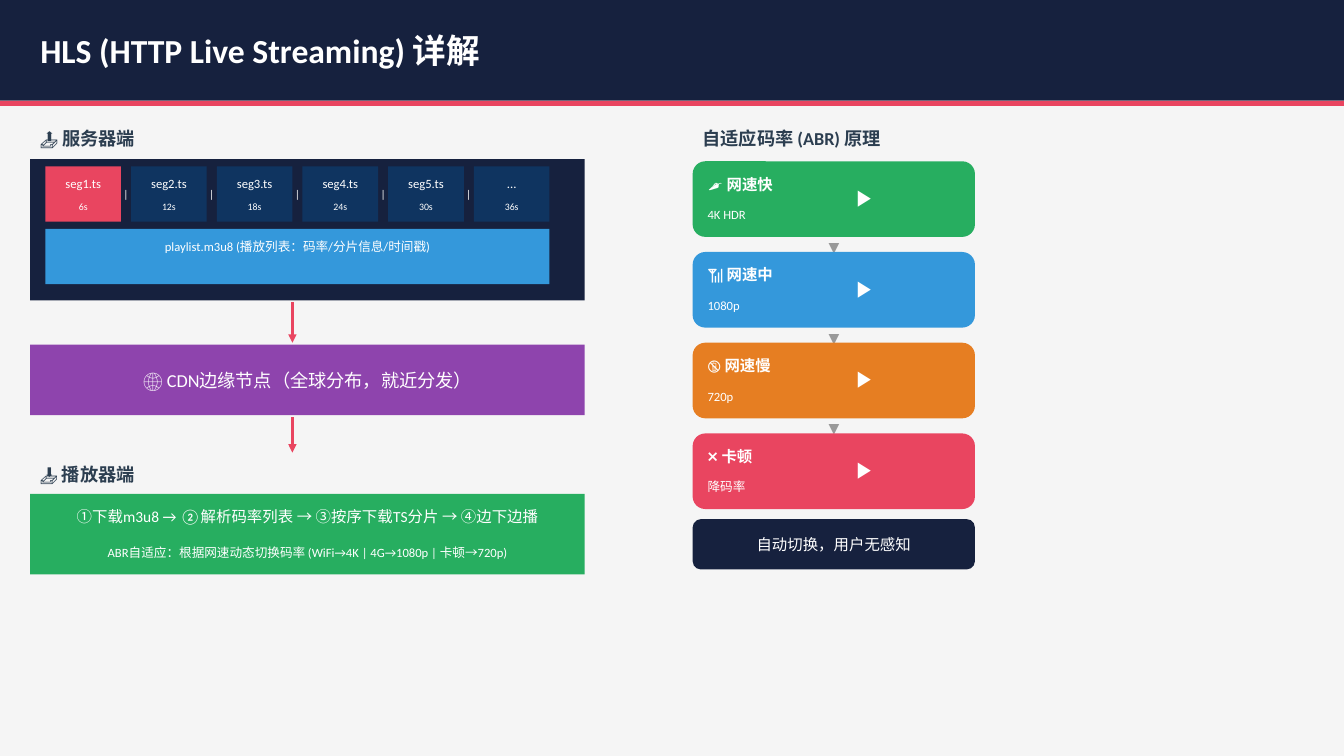
from lxml import etree
from pptx import Presentation
from pptx.dml.color import RGBColor
from pptx.enum.shapes import MSO_CONNECTOR, MSO_SHAPE
from pptx.enum.text import MSO_ANCHOR, PP_ALIGN
from pptx.oxml.ns import qn
from pptx.util import Inches, Pt

RECT, ROUND = MSO_SHAPE.RECTANGLE, MSO_SHAPE.ROUNDED_RECTANGLE
STRAIGHT = MSO_CONNECTOR.STRAIGHT
MIDDLE = MSO_ANCHOR.MIDDLE
LEFT, CENTER = PP_ALIGN.LEFT, PP_ALIGN.CENTER
FONT = "Calibri"

COLORS = {
    "bg": "F5F5F5", "navy": "16213E", "red": "E94560", "blue": "0F3460",
    "sky": "3498DB", "purple": "8E44AD", "green": "27AE60",
    "orange": "E67E22", "dark": "2C3E50", "gray": "999999", "white": "FFFFFF",
}
SEGMENTS = [("seg1.ts", "6s"), ("seg2.ts", "12s"), ("seg3.ts", "18s"),
            ("seg4.ts", "24s"), ("seg5.ts", "30s"), ("...", "36s")]
SPEEDS = [("🌶️ 网速快", "4K HDR", "green"), ("📶 网速中", "1080p", "sky"),
          ("📵 网速慢", "720p", "orange"), ("❌ 卡顿", "降码率", "red")]


def rgb(name):
    """Return the named colour."""
    return RGBColor.from_string(COLORS[name])


def add_box(s, x, y, w, h, color, kind=RECT):
    """Add a filled shape without outline."""
    sp = s.shapes.add_shape(kind, Inches(x), Inches(y), Inches(w), Inches(h))
    sp.shadow.inherit = False
    sp.fill.solid()
    sp.fill.fore_color.rgb = rgb(color)
    sp.line.fill.background()


def add_text(s, x, y, w, h, text, size, color="white", bold=False, align=CENTER, inset=None):
    """Add a one-line text box centred vertically."""
    tf = s.shapes.add_textbox(Inches(x), Inches(y), Inches(w), Inches(h)).text_frame
    frame = {"word_wrap": True, "vertical_anchor": MIDDLE}
    if inset is not None:
        frame.update({f"margin_{side}": Inches(inset)
                      for side in ("left", "top", "right", "bottom")})
    for key, value in frame.items():
        setattr(tf, key, value)
    p = tf.paragraphs[0]
    p.alignment = align
    r = p.add_run()
    r.text = text
    for key, value in {"name": FONT, "size": Pt(size), "bold": bold}.items():
        setattr(r.font, key, value)
    r.font.color.rgb = rgb(color)


def add_heading(s, x, y, w, text):
    """Add a section heading."""
    add_text(s, x, y, w, 0.3, text, 13, "dark", True, LEFT)


def add_arrow(s, x, y, length):
    """Add a downward arrow."""
    cx = s.shapes.add_connector(STRAIGHT, Inches(x), Inches(y), Inches(x), Inches(y + length))
    cx.line.color.rgb = rgb("red")
    cx.line.width = Pt(2)
    etree.SubElement(cx.line._get_or_add_ln(), qn("a:tailEnd"), type="triangle")
    etree.SubElement(cx._element.spPr, qn("a:effectLst"))


def add_header(s, w, h):
    """Draw the title band and its accent rule."""
    add_box(s, 0, 0, w, h, "navy")
    add_box(s, 0, h, w, 0.05, "red")
    add_text(s, 0.4, 0.15, w - 0.8, h - 0.3, "HLS (HTTP Live Streaming) 详解", 24,
             bold=True, align=LEFT, inset=0)


def add_server(s, x, y, w):
    """Draw the server panel with its segments and playlist."""
    add_heading(s, x, y, 3, "📤 服务器端")
    add_box(s, x, y + 0.36, w, 1.4, "navy")
    seg_w, seg_h, gap, top = 0.75, 0.55, 0.1, y + 0.43
    for i, (name, time) in enumerate(SEGMENTS):
        left = x + 0.15 + i * (seg_w + gap)
        add_box(s, left, top, seg_w, seg_h, "blue" if i else "red")
        add_text(s, left, top + 0.02, seg_w, 0.3, name, 9)
        add_text(s, left, top + 0.3, seg_w, 0.2, time, 7)
        if i < len(SEGMENTS) - 1:
            add_text(s, left + seg_w, top, gap, seg_h, "|", 8)
    add_box(s, x + 0.15, y + 1.05, w - 0.5, 0.55, "sky")
    add_text(s, x + 0.2, y + 1.08, w - 0.6, 0.3,
             "playlist.m3u8 (播放列表：码率/分片信息/时间戳)", 9)


def add_cdn(s, x, y, w):
    """Draw the CDN bar between its two arrows."""
    add_arrow(s, x + 2.6, y - 0.42, 0.4)
    add_box(s, x, y, w, 0.7, "purple")
    add_text(s, x + 0.05, y + 0.05, w - 0.1, 0.6, "🌐 CDN边缘节点（全球分布，就近分发）", 13)
    add_arrow(s, x + 2.6, y + 0.72, 0.35)


def add_player(s, x, y, w):
    """Draw the player panel."""
    add_heading(s, x, y, 3, "📥 播放器端")
    add_box(s, x, y + 0.35, w, 0.8, "green")
    add_text(s, x + 0.05, y + 0.4, w - 0.1, 0.35,
             "①下载m3u8 → ②解析码率列表 → ③按序下载TS分片 → ④边下边播", 11)
    add_text(s, x + 0.05, y + 0.77, w - 0.1, 0.32,
             "ABR自适应：根据网速动态切换码率 (WiFi→4K | 4G→1080p | 卡顿→720p)", 9)


def add_abr(s, x, y, w):
    """Draw the adaptive bitrate cards and their summary."""
    add_heading(s, x, y, 6.17, "自适应码率 (ABR) 原理")
    card_h, pitch = 0.75, 0.9
    for i, (speed, quality, color) in enumerate(SPEEDS):
        top = y + 0.38 + i * pitch
        add_box(s, x, top, w, card_h, color, ROUND)
        add_text(s, x + 0.05, top + 0.05, 1.5, 0.35, speed, 11, bold=True, align=LEFT)
        add_text(s, x + 0.05, top + 0.38, 1.5, 0.3, quality, 9, align=LEFT)
        add_text(s, x + 1.5, top + 0.15, 0.4, 0.4, "▶", 16)
        if i < len(SPEEDS) - 1:
            add_text(s, x + w / 2 - 0.15, top + card_h, 0.3, 0.2, "▼", 10, "gray")
    bottom = y + 0.33 + len(SPEEDS) * pitch
    add_box(s, x, bottom, w, 0.5, "navy", ROUND)
    add_text(s, x + 0.05, bottom + 0.03, w - 0.1, 0.44, "自动切换，用户无感知", 11)


def main():
    """Build and save the slide."""
    prs = Presentation()
    prs.slide_width, prs.slide_height = Inches(13.33), Inches(7.5)
    s = prs.slides.add_slide(prs.slide_layouts[6])
    s.background.fill.solid()
    s.background.fill.fore_color.rgb = rgb("bg")
    add_header(s, 13.33, 1)
    add_server(s, 0.3, 1.22, 5.5)
    add_cdn(s, 0.3, 3.42, 5.5)
    add_player(s, 0.3, 4.55, 5.5)
    add_abr(s, 6.87, 1.22, 2.8)
    prs.save("out.pptx")


if __name__ == "__main__":
    main()
